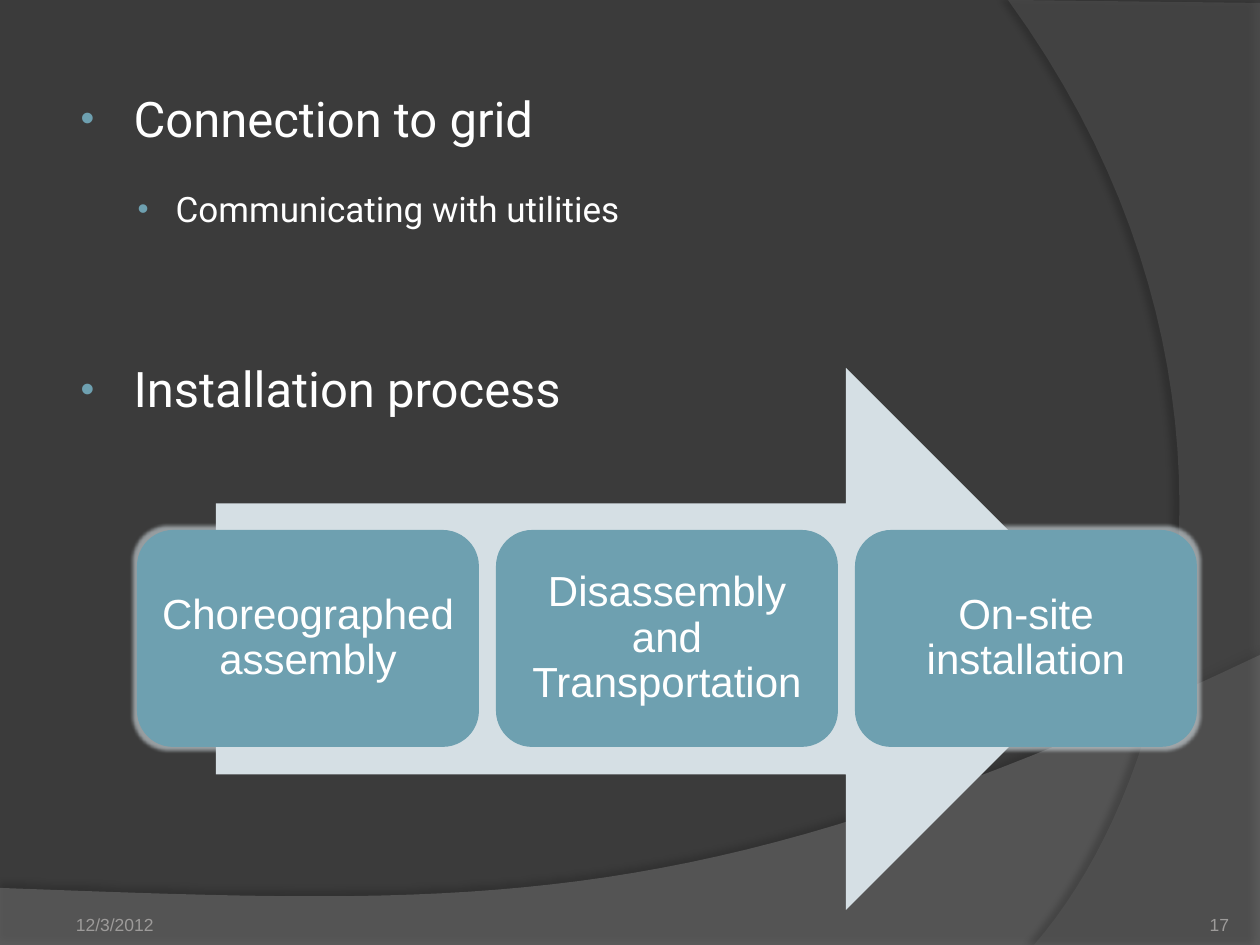
from pptx import Presentation
from pptx.util import Pt
from pptx.dml.color import RGBColor
from pptx.enum.shapes import MSO_SHAPE
from pptx.enum.text import MSO_ANCHOR, MSO_AUTO_SIZE, PP_ALIGN
from pptx.oxml import parse_xml
from pptx.oxml.ns import qn

NS = 'xmlns:a="http://schemas.openxmlformats.org/drawingml/2006/main"'
UNIT = 914400 / 126

DARK = RGBColor(0x3B, 0x3B, 0x3B)
GREY = RGBColor(0x7F, 0x7F, 0x7F)
SLATE = RGBColor(0x5E, 0x5E, 0x5E)
TEAL = RGBColor(0x6E, 0xA0, 0xB0)
PALE = RGBColor(0xD5, 0xDF, 0xE4)
WHITE = RGBColor(0xFF, 0xFF, 0xFF)
MUTED = RGBColor(0x9D, 0x9B, 0x9A)

# Content: text, level, size, space before (pt), indent and hang (px), bullet %
POINTS = [
    ("Connection to grid", 0, 28, 6, 58, -53, 80),
    ("Communicating with utilities", 1, 20, 5, 100, -38, 90),
    ("Installation process", 0, 28, 51, 58, -53, 80),
]
STEPS = ["Choreographed assembly", "Disassembly and Transportation",
         "On-site installation"]
# Text, box, alignment, insets
FOOT = [
    ("12/3/2012", (63, 885, 294, 50), PP_ALIGN.LEFT, (13, 6, 13, 0)),
    ("17", (1124, 885, 105, 50), PP_ALIGN.RIGHT, (0, 0, 0, 0)),
]
# Straight corners, curve controls and end, fill, opacity, shadow
WAVES = [
    ([(0, 888), (0, 946), (1260, 946), (1260, 655)],
     [(704, 919), (493, 906), (0, 888)], GREY, 45, (35, 4, 3.5, 270)),
    ([(1260, 3), (1260, 945), (1034, 945)],
     [(1178, 780), (1283, 378), (1008, 0)], SLATE, 40, (45, 4, 4, 180)),
]


def px(n):
    return round(n * UNIT)


def curve(start, ctrl, count=40):
    pts = [start, *ctrl]
    for i in range(1, count + 1):
        t = i / count
        wts = ((1 - t) ** 3, 3 * t * (1 - t) ** 2, 3 * t * t * (1 - t), t ** 3)
        yield tuple(sum(w * p[k] for w, p in zip(wts, pts)) for k in (0, 1))


def paint(shape, color):
    shape.shadow.inherit = False
    shape.fill.solid()
    shape.fill.fore_color.rgb = color
    shape.line.fill.background()


def effect(shape, inner):
    node = shape.element.spPr.find(qn("a:effectLst"))
    node.append(parse_xml(inner))


def write(para, text, size, font, color):
    run = para.add_run()
    run.text = text
    run.font.size = Pt(size)
    run.font.name = font
    run.font.color.rgb = color


def inset(frame, sides):
    (frame.margin_left, frame.margin_top,
     frame.margin_right, frame.margin_bottom) = map(px, sides)


deck = Presentation()
deck.slide_width, deck.slide_height = px(1260), px(945)
slide = deck.slides.add_slide(deck.slide_layouts[1])
shapes = slide.shapes
slide.background.fill.solid()
slide.background.fill.fore_color.rgb = DARK

# Background waves
for line, ctrl, color, alpha, (dim, blur, dist, angle) in WAVES:
    pts = [(px(x), px(y)) for x, y in [*line, *curve(line[-1], ctrl)]]
    pen = shapes.build_freeform(*pts[0], scale=1.0)
    pen.add_line_segments(pts[1:], close=True)
    wave = pen.convert_to_shape()
    paint(wave, color)
    tint = wave.element.spPr.find(qn("a:solidFill"))[0]
    tint.append(parse_xml(f'<a:alpha {NS} val="{alpha * 1000}"/>'))
    effect(wave, f'<a:outerShdw {NS} blurRad="{Pt(blur)}" dist="{Pt(dist)}" '
                 f'dir="{angle * 60000}" algn="ctr" rotWithShape="0">'
                 f'<a:srgbClr val="000000"><a:alpha val="{dim * 1000}"/>'
                 '</a:srgbClr></a:outerShdw>')

# Bullet list, placed above the waves
title = shapes.title.element
title.getparent().remove(title)
body = slide.placeholders[1]
body.element.getparent().append(body.element)
body.left, body.top, body.width, body.height = map(px, (63, 53, 1029, 791))
frame = body.text_frame
frame.auto_size = MSO_AUTO_SIZE.NONE
frame.vertical_anchor = MSO_ANCHOR.TOP
for i, (text, level, size, before, left, hang, pct) in enumerate(POINTS):
    para = frame.add_paragraph() if i else frame.paragraphs[0]
    para.level = level
    para.line_spacing = 1.5
    para.space_before, para.space_after = Pt(before), Pt(6)
    write(para, text, size, "Roboto", WHITE)
    props = para._p.get_or_add_pPr()
    props.set("marL", str(px(left)))
    props.set("indent", str(px(hang)))
    for part in (f'<a:buClr {NS}><a:srgbClr val="{TEAL}"/></a:buClr>',
                 f'<a:buSzPct {NS} val="{pct * 1000}"/>',
                 f'<a:buFont {NS} typeface="Arial"/>',
                 f'<a:buChar {NS} char="•"/>'):
        props.append(parse_xml(part))

# Date and slide number
for text, box, align, sides in FOOT:
    frame = shapes.add_textbox(*map(px, box)).text_frame
    frame.word_wrap = True
    frame.vertical_anchor = MSO_ANCHOR.BOTTOM
    inset(frame, sides)
    frame.paragraphs[0].alignment = align
    write(frame.paragraphs[0], text, 10, "Arial", MUTED)

# Process arrow and step cards
arrow = shapes.add_shape(MSO_SHAPE.RIGHT_ARROW, *map(px, (216, 368, 901, 542)))
paint(arrow, PALE)
for i, text in enumerate(STEPS):
    box = (137 + 359 * i, 530, 342, 217)
    card = shapes.add_shape(MSO_SHAPE.ROUNDED_RECTANGLE, *map(px, box))
    paint(card, TEAL)
    effect(card, f'<a:glow {NS} rad="{Pt(4)}"><a:srgbClr val="{PALE}">'
                 '<a:alpha val="60000"/></a:srgbClr></a:glow>')
    frame = card.text_frame
    frame.word_wrap = True
    frame.vertical_anchor = MSO_ANCHOR.MIDDLE
    inset(frame, (13, 13, 13, 13))
    para = frame.paragraphs[0]
    para.alignment = PP_ALIGN.CENTER
    para.line_spacing = 0.9
    write(para, text, 24, "Arial", WHITE)

deck.save("out.pptx")
